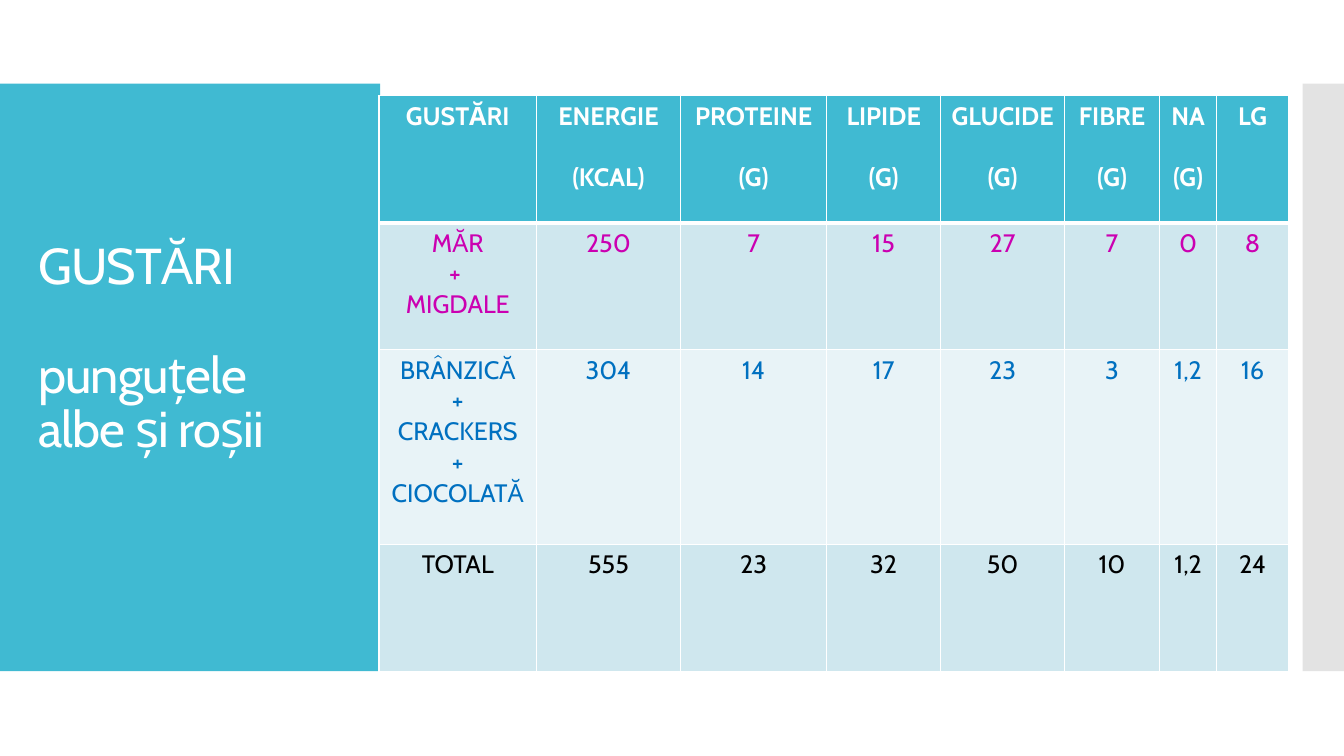
from dataclasses import dataclass

from lxml import etree
from pptx import Presentation
from pptx.dml.color import RGBColor
from pptx.enum.shapes import MSO_SHAPE
from pptx.enum.text import MSO_ANCHOR, PP_ALIGN
from pptx.oxml.ns import qn
from pptx.util import Emu, Pt

RECTANGLE = MSO_SHAPE.RECTANGLE
CENTER, LEFT = PP_ALIGN.CENTER, PP_ALIGN.LEFT
MIDDLE = MSO_ANCHOR.MIDDLE

PX = 9144  # 100 px to the inch
FONT = "Cabin"
WHITE, TEAL, GREY = "FFFFFF", "40BAD2", "C8C8C8"
BAND_DARK, BAND_LIGHT = "CFE7EE", "E8F3F7"


@dataclass
class Panel:
    left: int
    width: int
    color: str
    opacity: int = 100


@dataclass
class SnackRow:
    height: int
    fill: str
    color: str
    cells: list[str]
    bold: bool = False
    top_line: int = 1
    bottom_line: int = 1
    gap: int = 0


PANELS = [Panel(0, 377, TEAL), Panel(1292, 42, GREY, opacity=50)]
COLUMN_WIDTHS = [156, 143, 145, 113, 123, 94, 57, 71]
ROWS = [
    SnackRow(126, TEAL, WHITE,
             ["GUSTĂRI", "ENERGIE\n(KCAL)", "PROTEINE\n(G)", "LIPIDE\n(G)",
              "GLUCIDE\n(G)", "FIBRE\n(G)", "NA\n(G)", "LG"],
             bold=True, bottom_line=3, gap=22),
    SnackRow(126, BAND_DARK, "CB00B1",
             ["MĂR\n+ \nMIGDALE", "250", "7", "15", "27", "7", "0", "8"],
             top_line=3),
    SnackRow(193, BAND_LIGHT, "0070C0",
             ["BRÂNZICĂ\n+\nCRACKERS\n+\nCIOCOLATĂ",
              "304", "14", "17", "23", "3", "1,2", "16"]),
    SnackRow(126, BAND_DARK, "000000",
             ["TOTAL", "555", "23", "32", "50", "10", "1,2", "24"]),
]


def px(length: int) -> Emu:
    return Emu(length * PX)


def rgb(value: str) -> RGBColor:
    return RGBColor.from_string(value)


def write_text(frame, text: str, *, size: int, color: str, bold: bool = False,
               align=LEFT, gap: int = 0, line_spacing: float = 1.0,
               tracking: int = 0) -> None:
    """Write one paragraph per line; a vertical tab breaks within one."""
    for index, line in enumerate(text.split("\n")):
        para = frame.add_paragraph() if index else frame.paragraphs[0]
        para.text = line
        para.alignment = align
        para.line_spacing = line_spacing
        para.space_before = Pt(gap if index else 0)
        for span in para.runs:
            span.font.name = FONT
            span.font.size = Pt(size)
            span.font.bold = bold
            span.font.color.rgb = rgb(color)
            if tracking:
                span.font._element.set("spc", str(tracking))


def add_panel(page, panel: Panel) -> None:
    shape = page.shapes.add_shape(
        RECTANGLE, px(panel.left), px(83), px(panel.width), px(583))
    shape.shadow.inherit = False
    shape.line.fill.background()
    shape.fill.solid()
    shape.fill.fore_color.rgb = rgb(panel.color)
    if panel.opacity < 100:
        color = shape._element.spPr.find(f".//{qn('a:srgbClr')}")
        etree.SubElement(color, qn("a:alpha"), val=str(panel.opacity * 1000))


def add_title(page, text: str) -> None:
    box = page.shapes.add_textbox(px(28), px(123), px(322), px(503))
    frame = box.text_frame
    frame.word_wrap = True
    frame.vertical_anchor = MIDDLE
    frame.margin_bottom = px(60)
    write_text(frame, text, size=36, color=WHITE, gap=39,
               line_spacing=0.9, tracking=-60)


def set_borders(cell, top: int, bottom: int) -> None:
    properties = cell._tc.get_or_add_tcPr()
    sides = {"lnL": 1, "lnR": 1, "lnT": top, "lnB": bottom}
    for index, (side, points) in enumerate(sides.items()):
        line = etree.Element(qn(f"a:{side}"), w=str(Pt(points)))
        fill = etree.SubElement(line, qn("a:solidFill"))
        etree.SubElement(fill, qn("a:srgbClr"), val=WHITE)
        properties.insert(index, line)


def add_snack_table(page, rows: list[SnackRow]) -> None:
    table = page.shapes.add_table(
        len(rows), len(COLUMN_WIDTHS), px(376), px(95),
        px(sum(COLUMN_WIDTHS)), px(sum(row.height for row in rows))).table
    for column, width in zip(table.columns, COLUMN_WIDTHS):
        column.width = px(width)
    for table_row, row in zip(table.rows, rows):
        table_row.height = px(row.height)
        for cell, text in zip(table_row.cells, row.cells):
            cell.fill.solid()
            cell.fill.fore_color.rgb = rgb(row.fill)
            set_borders(cell, row.top_line, row.bottom_line)
            write_text(cell.text_frame, text, size=18, color=row.color,
                       bold=row.bold, align=CENTER, gap=row.gap)


def main() -> None:
    deck = Presentation()
    deck.slide_width, deck.slide_height = px(1333), px(750)
    page = deck.slides.add_slide(deck.slide_layouts[6])

    # Side panels
    for panel in PANELS:
        add_panel(page, panel)

    # Title and nutrition table
    add_title(page, "GUSTĂRI\npunguțele \valbe și roșii")
    add_snack_table(page, ROWS)

    deck.save("out.pptx")


if __name__ == "__main__":
    main()
